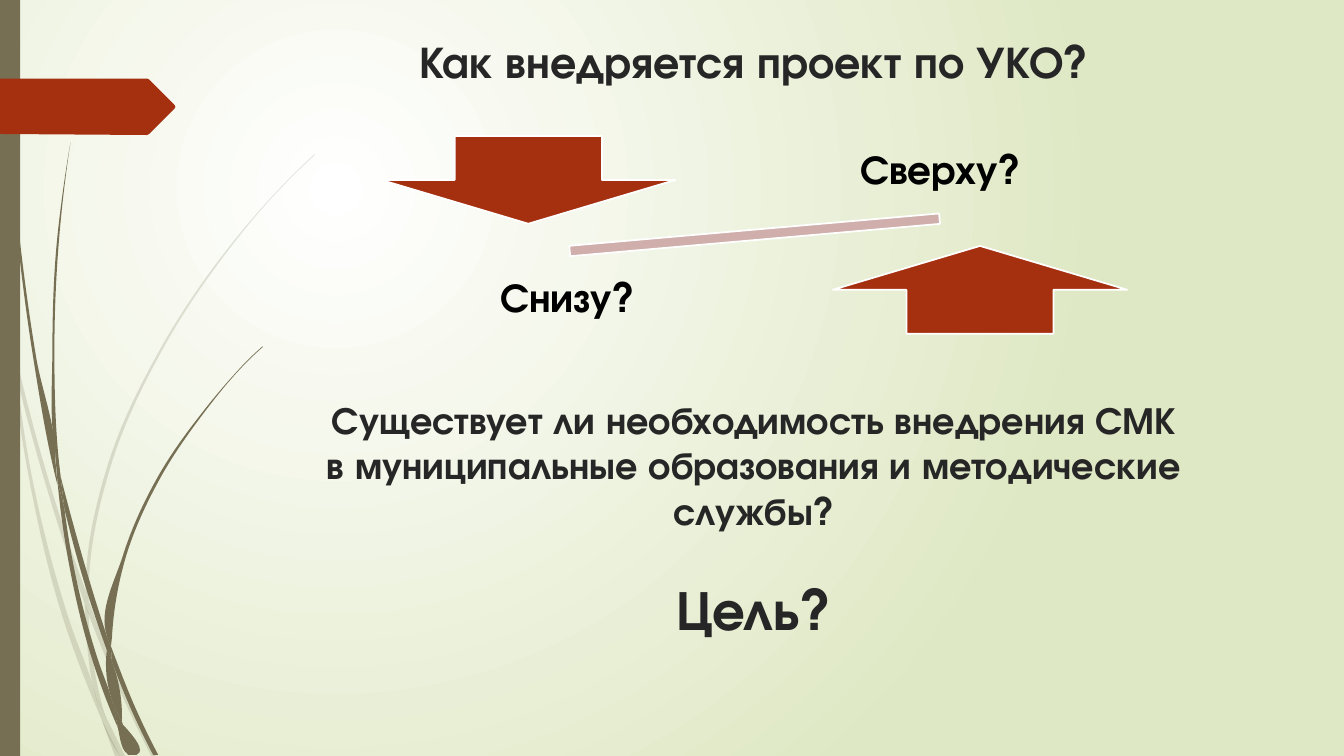
from math import hypot

from lxml import etree
from pptx import Presentation
from pptx.dml.color import RGBColor
from pptx.enum.shapes import MSO_SHAPE
from pptx.enum.text import MSO_ANCHOR, PP_ALIGN
from pptx.oxml.ns import qn
from pptx.util import Pt

PX = 9144
WIDTH, HEIGHT = 1333, 750
RECTANGLE = MSO_SHAPE.RECTANGLE
MINUS = MSO_SHAPE.MATH_MINUS
DOWN_ARROW, UP_ARROW = MSO_SHAPE.DOWN_ARROW, MSO_SHAPE.UP_ARROW
TOP, MIDDLE = MSO_ANCHOR.TOP, MSO_ANCHOR.MIDDLE
CENTER = PP_ALIGN.CENTER
FONT = "TeX Gyre Adventor"
OLIVE, RUST, ROSE = "766F54", "A53010", "CFAEAB"
WHITE, LIME, BLACK, INK = "FFFFFF", "DFE8C4", "000000", "262626"

PALE_STEMS = [
    ([(11, 350), (9, 322), (0, 282)], [(0, 299), (10, 344), (11, 350)]),
    ([(14, 345), (62, 520), (85, 586)], [(84, 599), (58, 522), (17, 376)]),
    ([(88, 596), (92, 607), (127, 692), (155, 750)], [(150, 750), (123, 694), (88, 610)]),
    ([(105, 711), (119, 750)], [(124, 750), (105, 711)]),
    ([(11, 350), (28, 470), (65, 621), (92, 693), (101, 714)],
     [(99, 707), (93, 683), (70, 619), (31, 469), (17, 376)]),
    ([(84, 599), (87, 646), (93, 683), (96, 692), (105, 711)],
     [(103, 706), (91, 646), (88, 610), (88, 608)]),
    ([(88, 596), (88, 584), (110, 462), (160, 349), (229, 245), (268, 198), (290, 175), (312, 154)],
     [(312, 153), (289, 175), (268, 197), (228, 244), (158, 348), (107, 461), (85, 584), (85, 586)]),
    ([(101, 714), (114, 750)], [(119, 750), (101, 714)]),
    ([(88, 610), (88, 596)], [(85, 586), (84, 599)]),
    ([(93, 683), (99, 707), (101, 714), (119, 750)], [(105, 711), (96, 692)]),
]
DARK_STEMS = [
    ([(7, 110), (17, 233), (33, 355), (56, 477), (57, 481)],
     [(55, 457), (55, 453), (36, 355), (19, 232), (8, 109), (5, 48), (4, 0), (3, 0), (4, 48)]),
    ([(60, 472), (93, 590), (106, 631)], [(106, 645), (88, 592), (64, 505)]),
    ([(110, 641), (113, 649), (136, 706), (157, 749)], [(152, 749), (132, 708), (111, 656)]),
    ([(57, 477), (68, 557), (93, 659), (111, 708), (117, 722)],
     [(116, 717), (110, 691), (98, 657), (72, 556), (64, 505)]),
    ([(60, 472), (58, 453), (54, 349), (58, 245), (63, 193), (70, 141)],
     [(70, 141), (62, 193), (56, 245), (52, 349), (55, 449), (60, 472)]),
    ([(122, 719), (133, 749)], [(136, 749), (122, 719)]),
    ([(57, 477), (64, 505)], [(60, 472), (55, 449), (55, 453)]),
    ([(111, 633), (125, 552), (158, 476), (205, 406), (231, 374), (245, 359), (261, 344)],
     [(260, 344), (245, 358), (231, 373), (204, 405), (156, 474), (122, 551), (106, 631), (110, 641)]),
    ([(117, 722), (127, 749)], [(131, 749), (117, 722)]),
    ([(106, 645), (110, 691), (116, 706), (122, 719)], [(121, 716), (111, 656), (109, 651)]),
    ([(106, 645), (109, 651), (111, 656)], [(110, 641), (106, 631)]),
    ([(116, 706), (110, 691)], [(116, 717), (117, 722), (130, 749), (133, 749), (122, 719)]),
]
TAG_OUTLINE = [(0, 0), (146, 0), (148, 1), (173, 26), (174, 28),
               (173, 30), (148, 55), (146, 56), (0, 55)]


def color(value):
    """Turn a hex string into a colour."""
    return RGBColor.from_string(value)


def paint(shape, fill, line=None, opacity=100):
    """Give a shape its fill, its line and no shadow."""
    shape.shadow.inherit = False
    shape.fill.solid()
    shape.fill.fore_color.rgb = color(fill)
    if opacity < 100:
        tint = shape.fill._xPr.find(qn("a:solidFill"))[0]
        etree.SubElement(tint, qn("a:alpha"), val=str(opacity * 1000))
    if line:
        shape.line.color.rgb = color(line)
        shape.line.width = Pt(1.25)
    else:
        shape.line.fill.background()


def add_preset(shapes, kind, box, fill, line=None, rotation=0):
    """Add a painted preset shape."""
    shape = shapes.add_shape(kind, *(length * PX for length in box))
    shape.rotation = rotation
    paint(shape, fill, line)


def add_outline(shapes, points, fill, opacity=100):
    """Add a painted polygon through the points and return it."""
    corners = [(round(x * PX), round(y * PX)) for x, y in points]
    builder = shapes.build_freeform(*corners[0])
    builder.add_line_segments(corners[1:], close=True)
    shape = builder.convert_to_shape()
    paint(shape, fill, opacity=opacity)
    return shape


def edge_controls(points):
    """Return the points of one stem edge with two curve handles in each gap."""
    gaps = [(x2 - x1, y2 - y1) for (x1, y1), (x2, y2) in zip(points, points[1:])]
    lengths = [hypot(*gap) for gap in gaps]
    headings = [(dx / length, dy / length) for (dx, dy), length in zip(gaps, lengths)]
    tangents = [headings[0]]
    for index in range(1, len(gaps)):
        x, y = (headings[index - 1][axis] * lengths[index] + headings[index][axis] * lengths[index - 1]
                for axis in (0, 1))
        size = hypot(x, y) or 1
        tangents.append((x / size, y / size))
    tangents.append(headings[-1])
    if len(gaps) > 1:
        for end, inner in ((0, 1), (-1, -2)):
            tangents[end] = tuple(2 * h - t for h, t in zip(headings[end], tangents[inner]))
    controls = [points[0]]
    for index, length in enumerate(lengths):
        start, end = points[index:index + 2]
        controls += [tuple(p + t * length / 3 for p, t in zip(start, tangents[index])),
                     tuple(p - t * length / 3 for p, t in zip(end, tangents[index + 1])), end]
    return controls


def bend(shape, first_count):
    """Turn the straight segments along both stem edges into cubic curves."""
    segments = shape.element.findall(".//" + qn("a:lnTo"))
    for edge in (segments[:first_count - 1], segments[first_count:]):
        for index in range(0, len(edge) - 2, 3):
            curve = etree.Element(qn("a:cubicBezTo"))
            edge[index].addprevious(curve)
            for segment in edge[index:index + 3]:
                curve.append(segment[0])
                segment.getparent().remove(segment)


def add_stems(slide, stems, opacity):
    """Add a group of grass stems."""
    group = slide.shapes.add_group_shape()
    for edges in stems:
        first, second = map(edge_controls, edges)
        bend(add_outline(group.shapes, first + second, OLIVE, opacity), len(first))


def add_text(shapes, box, lines, size, ink=INK, inset=None, anchor=TOP, spacing=None):
    """Add a centred bold text box."""
    frame = shapes.add_textbox(*(length * PX for length in box)).text_frame
    settings = {"word_wrap": True, "vertical_anchor": anchor}
    if inset:
        settings.update({f"margin_{side}": inset * PX for side in ("left", "top", "right", "bottom")})
    for name, value in settings.items():
        setattr(frame, name, value)
    for index, line in enumerate(lines):
        paragraph = frame.add_paragraph() if index else frame.paragraphs[0]
        paragraph.alignment = CENTER
        paragraph.line_spacing = spacing
        run = paragraph.add_run()
        run.text = line
        for name, value in {"name": FONT, "size": Pt(size), "bold": True}.items():
            setattr(run.font, name, value)
        run.font.color.rgb = color(ink)


def add_backdrop(slide):
    """Fill the background with a circular gradient."""
    fill = slide.background.fill
    fill.gradient()
    for stop, value in zip(fill.gradient_stops, (WHITE, LIME)):
        stop.color.rgb = color(value)
    linear = slide.element.xpath(".//p:bg//a:lin")[0]
    circle = etree.Element(qn("a:path"), {"path": "circle"})
    etree.SubElement(circle, qn("a:fillToRect"), l="50000", t="50000", r="100000", b="100000")
    linear.getparent().replace(linear, circle)


def add_side_decoration(slide, left, top, height):
    """Add the stems, the side bar and the tag at the slide edge."""
    add_stems(slide, PALE_STEMS, 20)
    add_stems(slide, DARK_STEMS, 100)
    add_preset(slide.shapes, RECTANGLE, (left, top, 20, height), OLIVE)
    add_outline(slide.shapes, [(left + x, top + 78 + y) for x, y in TAG_OUTLINE], RUST)


def add_balance(slide, left, top):
    """Add the two opposed arrows with their labels around a tilted bar."""
    shapes = slide.shapes.add_group_shape().shapes
    add_preset(shapes, MINUS, (left + 120, top + 87, 501, 44), ROSE, WHITE, 355)
    arrows = [(DOWN_ARROW, 0, 11, "Сверху?", 399, 0), (UP_ARROW, 448, 120, "Снизу?", 29, 127)]
    for kind, x, y, label, label_x, label_y in arrows:
        add_preset(shapes, kind, (left + x, top + y, 292, 87), RUST, WHITE)
        add_text(shapes, (left + label_x, top + label_y, 312, 92), [label], 29,
                 ink=BLACK, inset=23, anchor=MIDDLE, spacing=0.9)


def add_questions(slide, left, width):
    """Add the title and the questions below the arrows."""
    need = ["Существует ли необходимость внедрения СМК",
            "в муниципальные образования и методические службы?"]
    rows = [(29, 74, ["Как внедряется проект по УКО?"], 32),
            (388, 131, need, 27.2), (565, 111, ["Цель?"], 40)]
    for top, height, lines, size in rows:
        add_text(slide.shapes, (left, top, width, height), lines, size)


def main():
    """Build and save the presentation."""
    presentation = Presentation()
    presentation.slide_width, presentation.slide_height = WIDTH * PX, HEIGHT * PX
    slide = presentation.slides.add_slide(presentation.slide_layouts[6])
    add_backdrop(slide)
    add_side_decoration(slide, 0, 0, HEIGHT)
    add_balance(slide, 378, 124)
    add_questions(slide, 261, 974)
    presentation.save("out.pptx")


if __name__ == "__main__":
    main()
